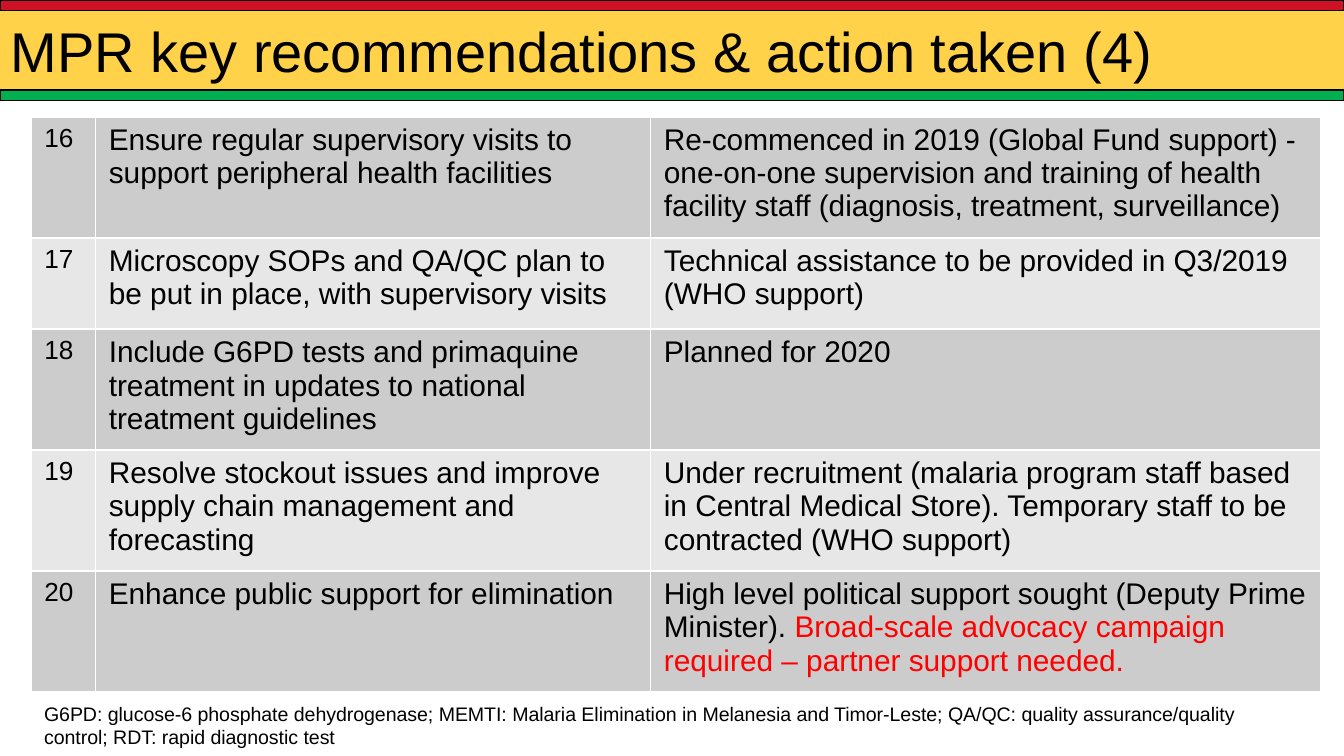
from lxml import etree
from pptx import Presentation
from pptx.dml.color import RGBColor
from pptx.enum.shapes import MSO_SHAPE
from pptx.enum.text import MSO_ANCHOR
from pptx.oxml.ns import qn
from pptx.util import Inches, Pt

RECTANGLE = MSO_SHAPE.RECTANGLE
TOP, MIDDLE = MSO_ANCHOR.TOP, MSO_ANCHOR.MIDDLE

BLACK = RGBColor(0x00, 0x00, 0x00)
WHITE = RGBColor(0xFF, 0xFF, 0xFF)
RED = RGBColor(0xFF, 0x00, 0x00)
FLAG_RED = RGBColor(0xCE, 0x11, 0x26)
FLAG_YELLOW = RGBColor(0xFF, 0xC0, 0x00)
FLAG_GREEN = RGBColor(0x00, 0xB0, 0x50)
BANDS = (RGBColor(0xCC, 0xCC, 0xCC), RGBColor(0xE7, 0xE7, 0xE7))

COLUMN_WIDTHS = (0.48, 4.13, 4.99)
COLUMN_SIZES = (14, 16, 16)
ROW_HEIGHTS = (0.81, 0.68, 0.81, 0.81, 0.81)
TABLE_HEIGHT = 4.28
FIRST_NUMBER = 16

# Each row: recommendation, action taken, and an optional highlighted ending.
RECOMMENDATIONS = (
    ("Ensure regular supervisory visits to support peripheral health facilities",
     "Re-commenced in 2019 (Global Fund support) - one-on-one supervision and "
     "training of health facility staff (diagnosis, treatment, surveillance)"),
    ("Microscopy SOPs and QA/QC plan to be put in place, with supervisory visits",
     "Technical assistance to be provided in Q3/2019 (WHO support)"),
    ("Include G6PD tests and primaquine treatment in updates to national "
     "treatment guidelines",
     "Planned for 2020"),
    ("Resolve stockout issues and improve supply chain management and forecasting",
     "Under recruitment (malaria program staff based in Central Medical Store). "
     "Temporary staff to be contracted (WHO support)"),
    ("Enhance public support for elimination",
     "High level political support sought (Deputy Prime Minister). ",
     "Broad-scale advocacy campaign required – partner support needed."),
)
ABBREVIATIONS = (
    "G6PD: glucose-6 phosphate dehydrogenase; MEMTI: Malaria Elimination in "
    "Melanesia and Timor-Leste; QA/QC: quality assurance/quality control; "
    "RDT: rapid diagnostic test")


def add_span(para, text, *, size, color=BLACK, font="Arial"):
    span = para.add_run()
    span.text = text
    span.font.name = font
    span.font.size = Pt(size)
    span.font.color.rgb = color


def set_alpha(shape, percent):
    """Make a solid fill partly transparent."""
    color = shape.fill._xPr.find(qn("a:solidFill"))[0]
    etree.SubElement(color, qn("a:alpha"), val=str(percent * 1000))


def set_borders(cell, color, points):
    """Draw all four cell edges; call before the cell fill is set."""
    properties = cell._tc.get_or_add_tcPr()
    for edge in ("a:lnL", "a:lnR", "a:lnT", "a:lnB"):
        line = etree.SubElement(properties, qn(edge), w=str(Pt(points)))
        fill = etree.SubElement(line, qn("a:solidFill"))
        etree.SubElement(fill, qn("a:srgbClr"), val=str(color))


class SlideBuilder:
    """Holds the current slide and the look of its elements."""

    def __init__(self, page):
        self.page = page

    def band(self, top, height, color, *, outlined=True, alpha=None):
        """Add a full-width bar."""
        shape = self.page.shapes.add_shape(
            RECTANGLE, 0, Inches(top), Inches(10), Inches(height))
        shape.shadow.inherit = False
        shape.fill.solid()
        shape.fill.fore_color.rgb = color
        if alpha is not None:
            set_alpha(shape, alpha)
        if outlined:
            shape.line.color.rgb = BLACK
            shape.line.width = Pt(0.75)
        else:
            shape.line.fill.background()

    def text(self, left, top, width, height, text, *, size,
             anchor=TOP, margins=(0.1, 0.05)):
        box = self.page.shapes.add_textbox(
            Inches(left), Inches(top), Inches(width), Inches(height))
        frame = box.text_frame
        frame.word_wrap = True
        frame.vertical_anchor = anchor
        frame.margin_left = frame.margin_right = Inches(margins[0])
        frame.margin_top = frame.margin_bottom = Inches(margins[1])
        add_span(frame.paragraphs[0], text, size=size)

    def table(self, left, top, rows):
        holder = self.page.shapes.add_table(
            len(rows), len(COLUMN_WIDTHS), Inches(left), Inches(top),
            Inches(sum(COLUMN_WIDTHS)), Inches(TABLE_HEIGHT))
        table = holder.table
        table.first_row = table.horz_banding = False
        for column, width in zip(table.columns, COLUMN_WIDTHS):
            column.width = Inches(width)
        for index, (row, height) in enumerate(zip(table.rows, ROW_HEIGHTS)):
            row.height = Inches(height)
            recommendation, action, *highlights = rows[index]
            texts = (str(FIRST_NUMBER + index), recommendation, action)
            for cell, text, size in zip(row.cells, texts, COLUMN_SIZES):
                set_borders(cell, WHITE, 1)
                cell.fill.solid()
                cell.fill.fore_color.rgb = BANDS[index % 2]
                add_span(cell.text_frame.paragraphs[0], text, size=size)
            for highlight in highlights:
                add_span(cell.text_frame.paragraphs[0], highlight,
                         size=size, color=RED)
        # Row heights reset the frame, so its height is set last.
        holder.height = Inches(TABLE_HEIGHT)


def main():
    deck = Presentation()
    deck.slide_width = Inches(10)
    deck.slide_height = deck.slide_width * 9 // 16
    builder = SlideBuilder(deck.slides.add_slide(deck.slide_layouts[6]))
    builder.band(0, 0.75, FLAG_YELLOW, outlined=False, alpha=71)
    builder.band(0.67, 0.08, FLAG_GREEN)
    builder.band(0, 0.08, FLAG_RED)
    builder.text(0, 0, 9.97, 0.75, "MPR key recommendations & action taken (4)",
                 size=30, anchor=MIDDLE, margins=(0.08, 0.04))
    builder.table(0.23, 0.87, RECOMMENDATIONS)
    builder.text(0.23, 5.17, 9.54, 0.45, ABBREVIATIONS, size=10.5)
    deck.save("out.pptx")


if __name__ == "__main__":
    main()
